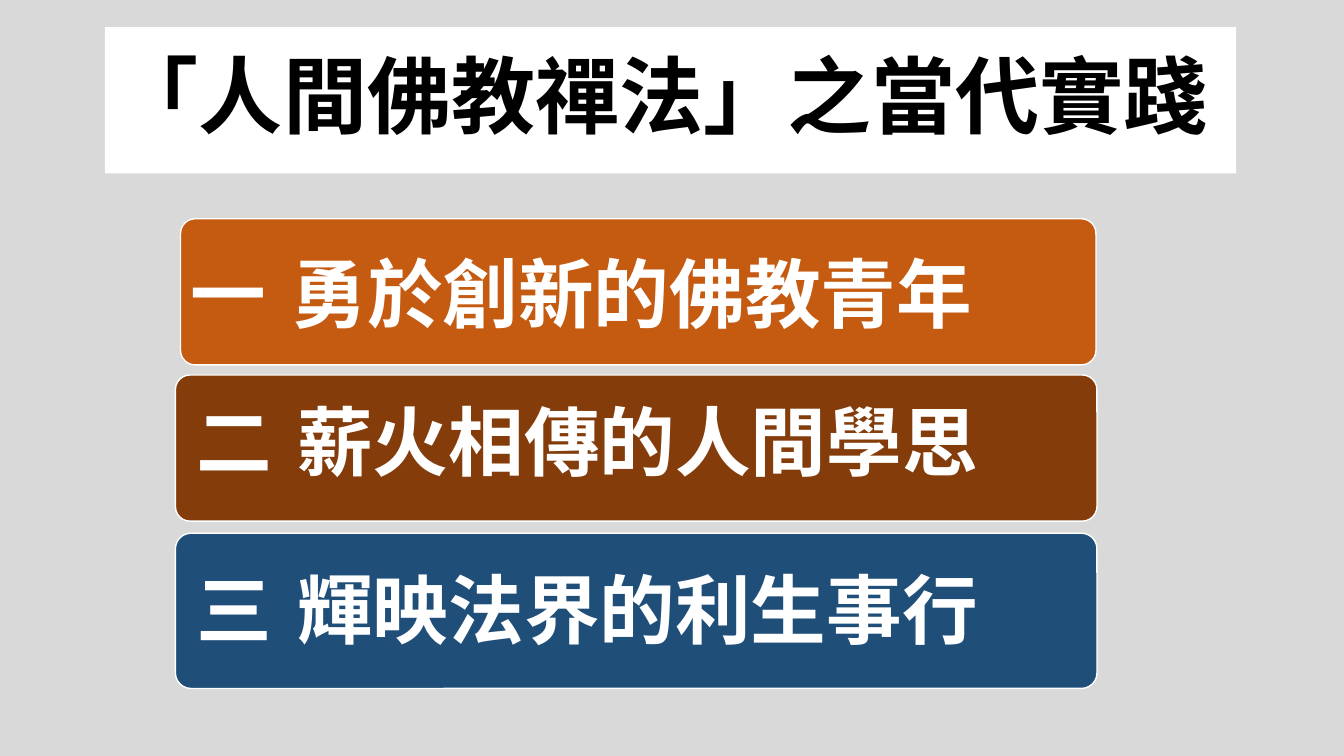
"""Build the agenda slide with a title and three numbered bars."""
from lxml.etree import SubElement
from pptx import Presentation
from pptx.dml.color import RGBColor
from pptx.enum.shapes import MSO_SHAPE as Preset
from pptx.enum.text import MSO_ANCHOR as Anchor, MSO_AUTO_SIZE as AutoSize, PP_ALIGN as Align
from pptx.oxml.ns import qn
from pptx.util import Inches, Pt

COLORS = {
    "background": "D9D9D9",
    "white": "FFFFFF",
    "black": "000000",
    "orange": "C55A11",
    "brown": "843C0B",
    "blue": "1F4E79",
}
FONT = "Noto Sans CJK SC"


def color(name):
    return RGBColor.from_string(COLORS[name])


def write_text(shape, text, *, size, ink, anchor, before=0, tab=None):
    frame = shape.text_frame
    frame.word_wrap = True
    frame.auto_size = AutoSize.NONE
    frame.vertical_anchor = anchor
    paragraph = frame.paragraphs[0]
    paragraph.alignment = Align.LEFT
    paragraph.line_spacing = 0.9
    paragraph.space_before = Pt(before)
    run = paragraph.add_run()
    run.text = text
    run.font.size = Pt(size)
    run.font.bold = True
    run.font.name = FONT
    run.font.color.rgb = color(ink)
    SubElement(run.font._element, qn("a:ea"), typeface=FONT)
    if tab:
        properties = paragraph._p.get_or_add_pPr()
        properties.set("marL", "0")
        properties.set("indent", "0")
        SubElement(properties, qn("a:buNone"))
        tabs = SubElement(properties, qn("a:tabLst"))
        SubElement(tabs, qn("a:tab"), pos=str(Inches(tab)), algn="l")


presentation = Presentation()
presentation.slide_width = Inches(13.33)
presentation.slide_height = Inches(7.5)
slide = presentation.slides.add_slide(presentation.slide_layouts[1])
slide.background.fill.solid()
slide.background.fill.fore_color.rgb = color("background")

title = slide.shapes.title
title.left, title.top, title.width, title.height = map(Inches, (1.04, 0.27, 11.22, 1.45))
title.fill.solid()
title.fill.fore_color.rgb = color("white")
write_text(title, "「人間佛教禪法」之當代實踐", size=60, ink="black", anchor=Anchor.MIDDLE)

topics = [
    ("一\t勇於創新的佛教青年", "orange", (1.79, 2.17, 9.08, 1.45), (1.79, 2.5, 8.74, 0.97)),
    ("二\t薪火相傳的人間學思", "brown", (1.74, 3.72, 9.14, 1.45), (1.85, 3.97, 8.71, 0.96)),
    ("三\t輝映法界的利生事行", "blue", (1.74, 5.29, 9.14, 1.54), (1.85, 5.64, 8.66, 0.83)),
]
for number, (text, fill, bar_box, text_box) in enumerate(topics):
    bar = slide.shapes.add_shape(Preset.ROUNDED_RECTANGLE, *map(Inches, bar_box))
    bar.adjustments[0] = 0.1
    bar.shadow.inherit = False
    bar.fill.solid()
    bar.fill.fore_color.rgb = color(fill)
    bar.line.color.rgb = color("white")
    bar.line.width = Pt(1)
    title.element.addprevious(bar.element)

    if number == 0:
        label = slide.placeholders[1]
        label.left, label.top, label.width, label.height = map(Inches, text_box)
    else:
        label = slide.shapes.add_textbox(*map(Inches, text_box))
    write_text(label, text, size=54, ink="white", anchor=Anchor.TOP, before=10, tab=1.09)

presentation.save("out.pptx")
